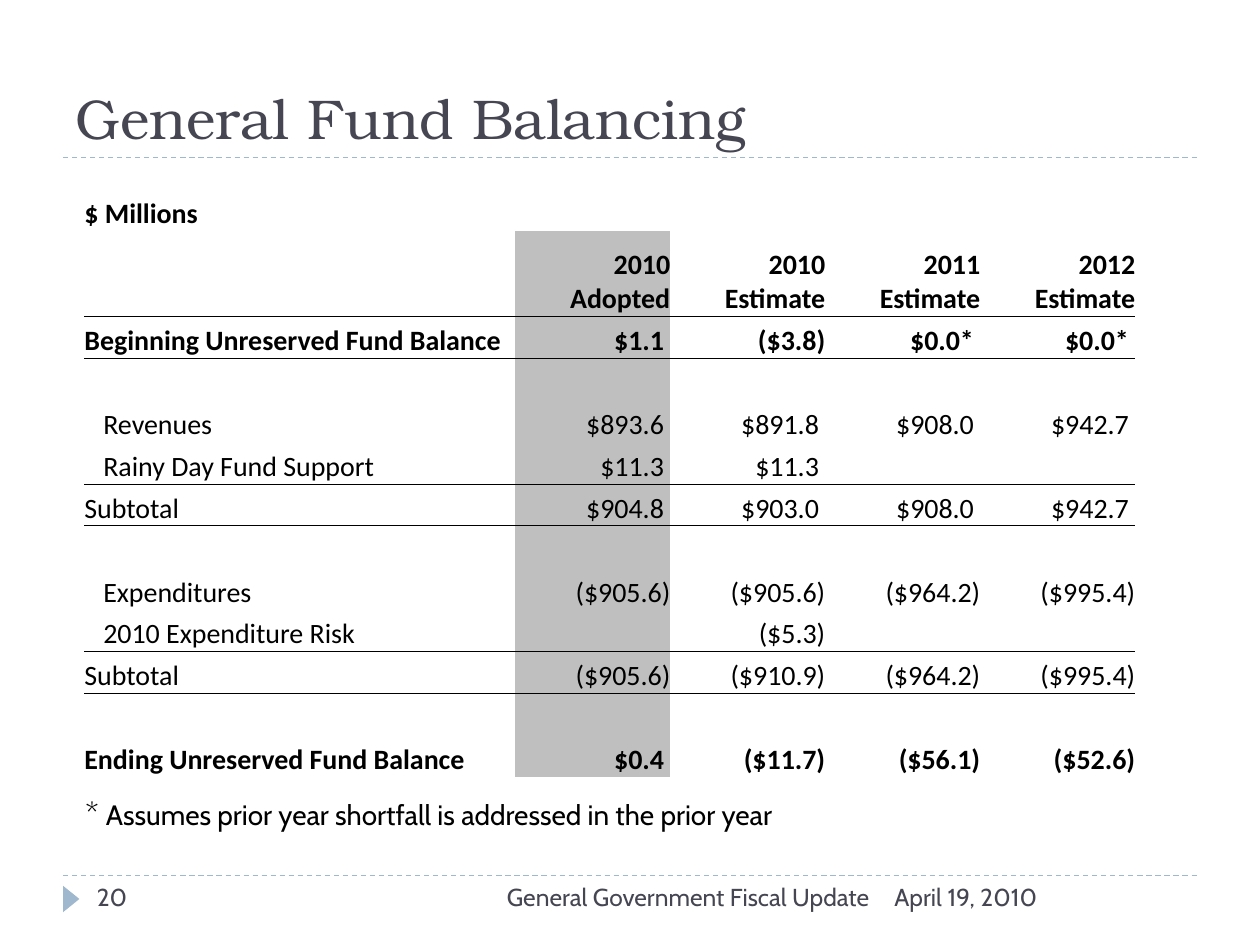
from dataclasses import dataclass

from pptx import Presentation
from pptx.dml.color import RGBColor
from pptx.enum.dml import MSO_LINE
from pptx.enum.shapes import MSO_CONNECTOR, MSO_SHAPE
from pptx.enum.text import MSO_ANCHOR, MSO_AUTO_SIZE, PP_ALIGN
from pptx.oxml.ns import qn
from pptx.oxml.xmlchemy import OxmlElement
from pptx.slide import Slide
from pptx.table import _Cell
from pptx.text.text import Font
from pptx.util import Inches, Pt

LEFT, RIGHT = PP_ALIGN.LEFT, PP_ALIGN.RIGHT
BOTTOM = MSO_ANCHOR.BOTTOM
FIXED = MSO_AUTO_SIZE.NONE
DASH = MSO_LINE.DASH
STRAIGHT = MSO_CONNECTOR.STRAIGHT
WEDGE = MSO_SHAPE.ISOSCELES_TRIANGLE
NO_STYLE = "{2D5ABB26-0587-4C30-8999-92F81FD0307C}"


@dataclass(frozen=True)
class Theme:
    ink: str = "000000"
    slate: str = "464653"
    blue: str = "9FB8CD"
    band: str = "BFBFBF"
    head: str = "TeX Gyre Bonum"
    body: str = "Cabin"
    grid: str = "Calibri"
    head_size: int = 32
    star_size: int = 18
    size: int = 16
    foot_size: int = 14


@dataclass(frozen=True)
class Row:
    label: str = ""
    sums: tuple[str, ...] = ("", "", "", "")
    bold: bool = False
    indent: bool = False
    rule: float = 0


@dataclass(frozen=True)
class Label:
    text: str
    left: float
    width: float
    align: PP_ALIGN = LEFT


THEME = Theme()
ROWS = (
    Row("$ Millions", bold=True),
    Row("", ("2010 Adopted", "2010 Estimate", "2011 Estimate", "2012 Estimate"), bold=True, rule=1),
    Row("Beginning Unreserved Fund Balance", ("$1.1", "($3.8)", "$0.0*", "$0.0*"), bold=True),
    Row(),
    Row("Revenues", ("$893.6", "$891.8", "$908.0", "$942.7"), indent=True),
    Row("Rainy Day Fund Support", ("$11.3", "$11.3", "", ""), indent=True, rule=0.5),
    Row("Subtotal", ("$904.8", "$903.0", "$908.0", "$942.7")),
    Row(),
    Row("Expenditures", ("($905.6)", "($905.6)", "($964.2)", "($995.4)"), indent=True),
    Row("2010 Expenditure Risk", ("", "($5.3)", "", ""), indent=True, rule=0.5),
    Row("Subtotal", ("($905.6)", "($910.9)", "($964.2)", "($995.4)")),
    Row(),
    Row("Ending Unreserved Fund Balance", ("$0.4", "($11.7)", "($56.1)", "($52.6)"), bold=True),
)
FOOT = (
    Label("April 19, 2010", 7, 2.5),
    Label("20", 0.67, 2.17),
    Label("General Government Fiscal Update", 3.17, 3.83, RIGHT),
)


def set_font(font: Font, name: str, size: int, color: str, bold: bool = False) -> None:
    font.name, font.size, font.bold = name, Pt(size), bold
    font.color.rgb = RGBColor.from_string(color)


def add_rule(slide: Slide, top: float) -> None:
    line = slide.shapes.add_connector(STRAIGHT, Inches(0.5), Inches(top), Inches(9.5), Inches(top))
    line.line.color.rgb = RGBColor.from_string(THEME.blue)
    line.line.width = Pt(0.75)
    line.line.dash_style = DASH
    line.element.spPr.append(OxmlElement("a:effectLst"))


def add_wedge(slide: Slide) -> None:
    wedge = slide.shapes.add_shape(WEDGE, Inches(0.46), Inches(7.07), Inches(0.21), Inches(0.13))
    wedge.rotation = 90
    wedge.shadow.inherit = False
    wedge.fill.solid()
    wedge.fill.fore_color.rgb = RGBColor.from_string(THEME.blue)
    wedge.line.fill.background()


def add_title(slide: Slide, text: str) -> None:
    title = slide.shapes.title
    title.left, title.top, title.width, title.height = map(Inches, (0.5, 0.17, 9, 1.08))
    frame = title.text_frame
    frame.text = text
    frame.auto_size, frame.vertical_anchor = FIXED, BOTTOM
    para = frame.paragraphs[0]
    para.alignment = LEFT
    set_font(para.font, THEME.head, THEME.head_size, THEME.slate)


def add_label(slide: Slide, label: Label) -> None:
    box = slide.shapes.add_textbox(Inches(label.left), Inches(6.95), Inches(label.width), Inches(0.4))
    frame = box.text_frame
    frame.word_wrap = True
    frame.text = label.text
    para = frame.paragraphs[0]
    para.alignment = label.align
    set_font(para.font, THEME.body, THEME.foot_size, THEME.slate)


def add_note(slide: Slide, text: str) -> None:
    box = slide.shapes.add_textbox(Inches(0.58), Inches(6.25), Inches(6.42), Inches(0.42))
    box.text_frame.word_wrap = True
    para = box.text_frame.paragraphs[0]
    for part, size in (("* ", THEME.star_size), (text, THEME.size)):
        run = para.add_run()
        run.text = part
        set_font(run.font, THEME.body, size, THEME.ink)


def add_edge(cell: _Cell, side: str, width: float) -> None:
    edge = OxmlElement(f"a:{side}")
    edge.set("w", str(Pt(width)))
    fill, color = OxmlElement("a:solidFill"), OxmlElement("a:srgbClr")
    color.set("val", THEME.ink)
    fill.append(color)
    edge.append(fill)
    cell._tc.get_or_add_tcPr().insert(0, edge)


def fill_cell(cell: _Cell, text: str, row: Row, first: bool) -> None:
    cell.margin_left = cell.margin_right = cell.margin_top = cell.margin_bottom = 0
    cell.vertical_anchor = BOTTOM
    cell.text = text
    para = cell.text_frame.paragraphs[0]
    para.alignment = LEFT if first else RIGHT
    set_font(para.font, THEME.grid, THEME.size, THEME.ink, row.bold)
    if first and row.indent:
        cell.margin_left = Inches(0.15)
    if text.startswith("$") and not first:
        cell.margin_right = Inches(0.05)


def add_grid(slide: Slide) -> None:
    high = 0.68
    low = (4.67 - high) / (len(ROWS) - 1)
    frame = slide.shapes.add_table(len(ROWS), 5, Inches(0.67), Inches(1.5), Inches(8.35), Inches(4.67))
    for style in frame.element.iter(qn("a:tableStyleId")):
        style.text = NO_STYLE
    table = frame.table
    table.first_row = table.horz_banding = False
    for col, width in zip(table.columns, (3.42, *[1.23] * 4)):
        col.width = Inches(width)
    table.cell(0, 0).merge(table.cell(0, 4))
    above = 0.0
    for r, row in enumerate(ROWS):
        table.rows[r].height = Inches(high if r == 1 else low)
        for c, text in enumerate((row.label, *row.sums)):
            cell = table.cell(r, c)
            fill_cell(cell, text, row, c == 0)
            if r and c == 1:
                cell.fill.solid()
                cell.fill.fore_color.rgb = RGBColor.from_string(THEME.band)
            else:
                cell.fill.background()
            for side, width in (("lnB", row.rule), ("lnT", above)):
                if width:
                    add_edge(cell, side, width)
        above = row.rule


def main() -> None:
    deck = Presentation()
    deck.slide_width, deck.slide_height = Inches(10), Inches(7.5)
    slide = deck.slides.add_slide(deck.slide_layouts[5])
    for top in (6.95, 1.25):
        add_rule(slide, top)
    add_wedge(slide)
    add_title(slide, "General Fund Balancing")
    for label in FOOT:
        add_label(slide, label)
    add_note(slide, "Assumes prior year shortfall is addressed in the prior year")
    add_grid(slide)
    deck.save("out.pptx")


if __name__ == "__main__":
    main()
